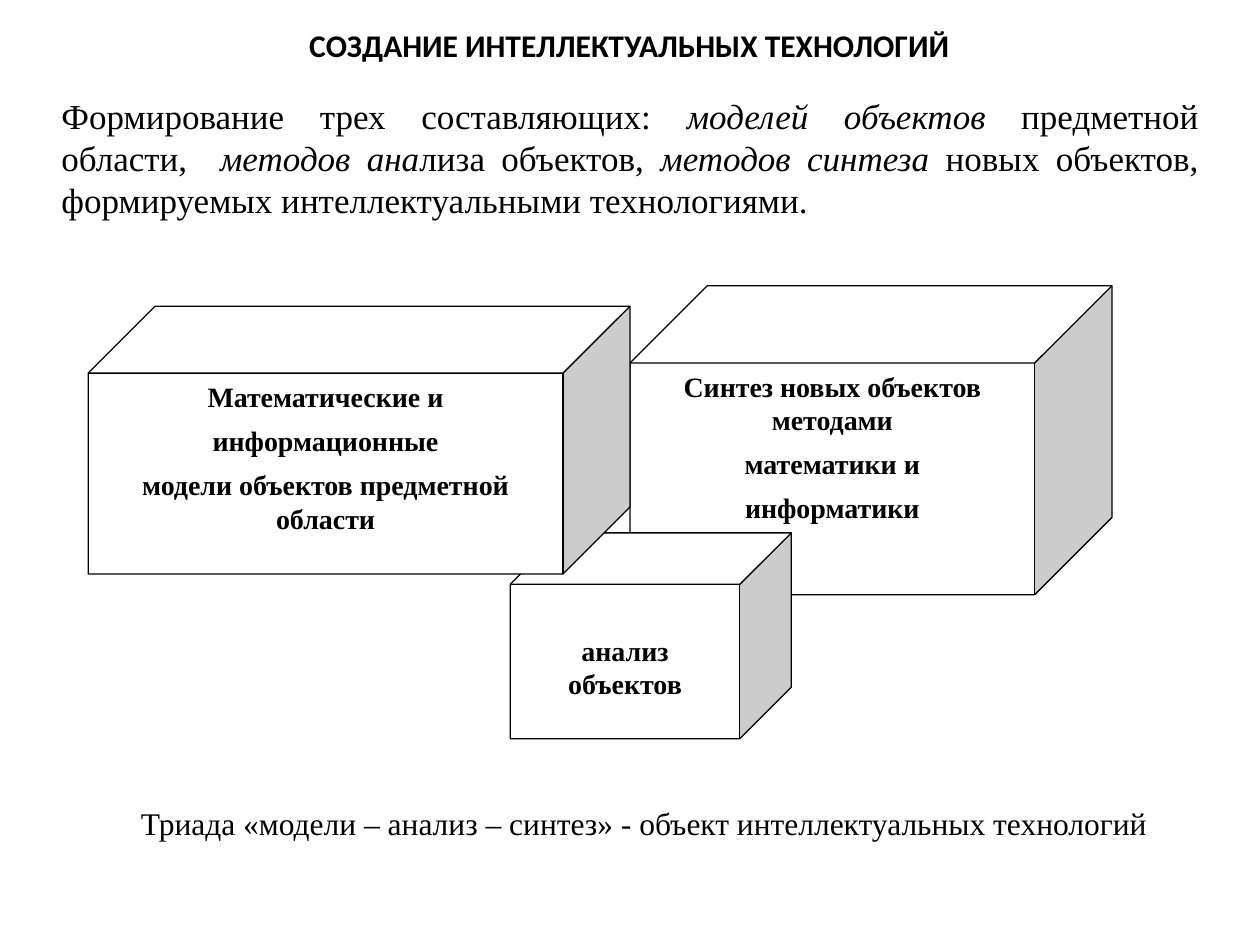
import pptx
import pptx.dml.color
import pptx.enum.shapes
import pptx.enum.text
import pptx.util

Pt = pptx.util.Pt
ALIGN = pptx.enum.text.PP_ALIGN
BLACK = pptx.dml.color.RGBColor(0, 0, 0)
WHITE = pptx.dml.color.RGBColor(255, 255, 255)
SERIF = "Times New Roman"
SANS = "Calibri"

INTRO = [
    ("Формирование трех составляющих: ", False),
    ("моделей объектов", True),
    (" предметной области,  ", False),
    ("методов ана", True),
    ("лиза объектов, ", False),
    ("методов синтеза", True),
    (" новых объектов, формируемых интеллектуальными технологиями.", False),
]
SYNTHESIS = ["Синтез новых объектов методами", "математики и", "информатики"]
ANALYSIS = ["анализ объектов"]
MODELS = ["Математические и", "информационные", "модели объектов предметной области"]
TRIAD = "Триада «модели – анализ – синтез» - объект интеллектуальных технологий"


def add_run(paragraph, text, size, font=SERIF, bold=False, italic=False):
    run = paragraph.add_run()
    run.text = text
    run.font.size = Pt(size)
    run.font.name = font
    run.font.bold = bold
    run.font.italic = italic
    run.font.color.rgb = BLACK


def set_frame(frame, top_inset=3.6):
    frame.word_wrap = True
    frame.vertical_anchor = pptx.enum.text.MSO_ANCHOR.TOP
    frame.margin_left = frame.margin_right = Pt(7.2)
    frame.margin_top = Pt(top_inset)
    frame.margin_bottom = Pt(3.6)


def place_title(slide, box, text):
    title = slide.shapes.title
    title.left, title.top, title.width, title.height = map(Pt, box)
    set_frame(title.text_frame)
    title.text_frame.auto_size = pptx.enum.text.MSO_AUTO_SIZE.NONE
    heading = title.text_frame.paragraphs[0]
    heading.alignment = ALIGN.CENTER
    add_run(heading, text, 18, SANS, bold=True)


def place_text(slide, box, pieces, size, alignment):
    frame = slide.shapes.add_textbox(*map(Pt, box)).text_frame
    set_frame(frame)
    paragraph = frame.paragraphs[0]
    paragraph.alignment = alignment
    for text, italic in pieces:
        add_run(paragraph, text, size, italic=italic)


def place_cube(shapes, box, lines, top_inset=3.6):
    cube = shapes.add_shape(pptx.enum.shapes.MSO_SHAPE.CUBE, *map(Pt, box))
    cube.adjustments[0] = 0.25
    cube.shadow.inherit = False
    cube.fill.solid()
    cube.fill.fore_color.rgb = WHITE
    cube.line.color.rgb = BLACK
    cube.line.width = Pt(0.75)
    frame = cube.text_frame
    set_frame(frame, top_inset)
    for index, line in enumerate(lines):
        paragraph = frame.add_paragraph() if index else frame.paragraphs[0]
        paragraph.alignment = ALIGN.CENTER
        paragraph.space_after = Pt(6)
        add_run(paragraph, line, 16, bold=True)


def place_triad(slide, box):
    left, top = box
    triad = slide.shapes.add_group_shape().shapes
    place_cube(triad, (left + 309.6, top, 275.4, 176.5), SYNTHESIS)
    place_cube(triad, (left + 241.2, top + 141.2, 160.6, 117.6), ANALYSIS, top_inset=28)
    place_cube(triad, (left, top + 11.7, 309.6, 153), MODELS)


def main():
    deck = pptx.Presentation()
    deck.slide_width, deck.slide_height = Pt(720), Pt(540)
    slide = deck.slides.add_slide(deck.slide_layouts[5])
    place_title(slide, (106.6, 11.5, 506.2, 29), "СОЗДАНИЕ ИНТЕЛЛЕКТУАЛЬНЫХ ТЕХНОЛОГИЙ")
    place_text(slide, (28, 50.4, 664, 80), INTRO, 20, ALIGN.JUSTIFY)
    place_triad(slide, (50.4, 163.3))
    place_text(slide, (73.4, 455.8, 602, 29), [(TRIAD, False)], 18, ALIGN.LEFT)
    deck.save("out.pptx")


if __name__ == "__main__":
    main()
